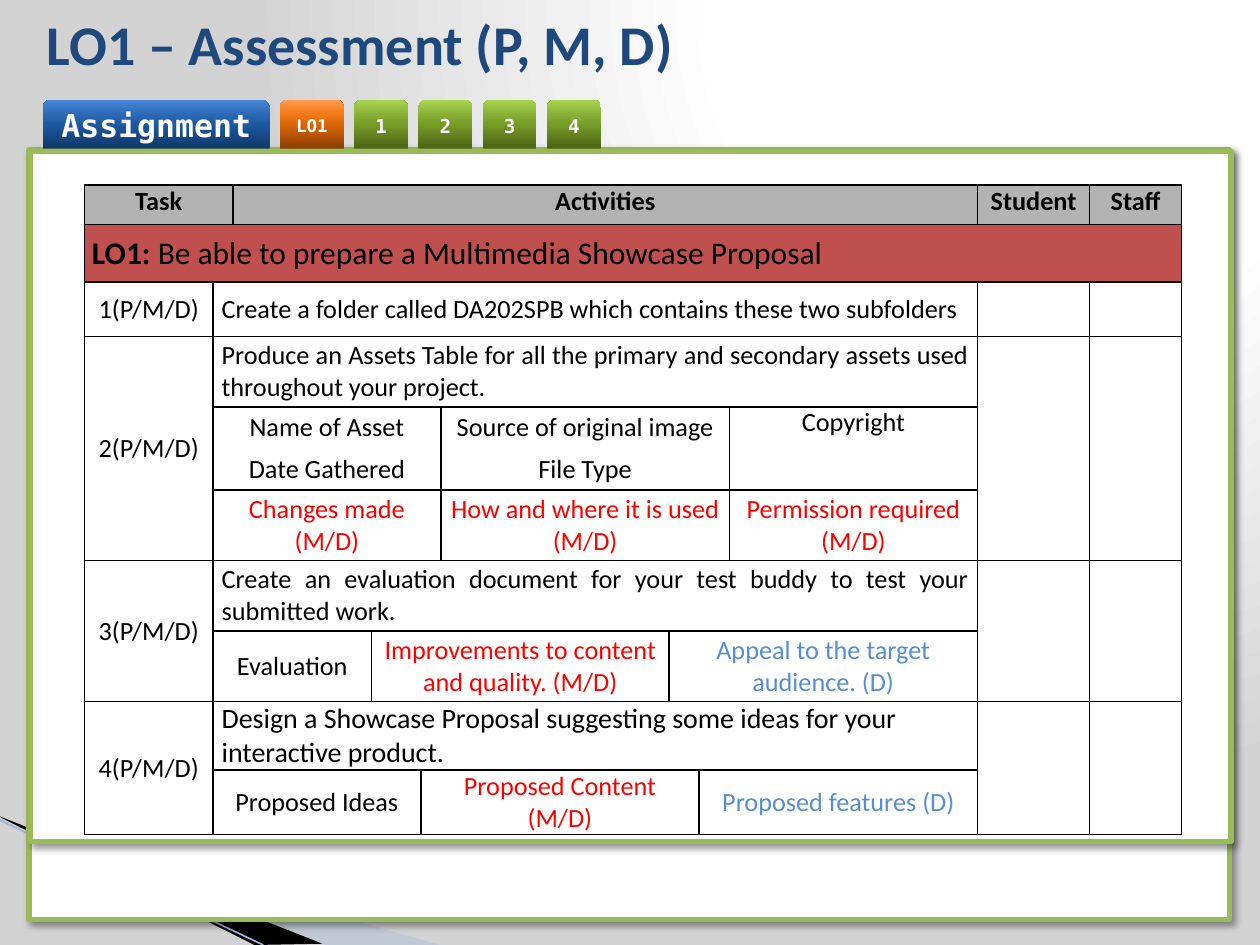
"""Build the LO1 assessment slide: tab strip, panels and a task table."""
from itertools import product
from pptx import Presentation
from pptx.dml.color import RGBColor
from pptx.enum.shapes import MSO_CONNECTOR, MSO_SHAPE
from pptx.enum.text import MSO_ANCHOR, PP_ALIGN
from pptx.oxml import parse_xml
from pptx.oxml.ns import nsdecls
from pptx.util import Inches, Pt

BLACK, WHITE = RGBColor(0, 0, 0), RGBColor(255, 255, 255)
NAVY, GREEN = RGBColor(0x1F, 0x49, 0x7D), RGBColor(0x9B, 0xBB, 0x59)
GREY, BRICK = RGBColor(0xB3, 0xB3, 0xB3), RGBColor(0xC0, 0x50, 0x4D)
RED, SKY = RGBColor(255, 0, 0), RGBColor(0x55, 0x8E, 0xD5)
HAZE, EDGE = RGBColor(0xA7, 0xB9, 0xDB), RGBColor(0x9E, 0xB3, 0xD6)
LEFT, CENTER, JUST = PP_ALIGN.LEFT, PP_ALIGN.CENTER, PP_ALIGN.JUSTIFY
NS = nsdecls("a")


def gradient(stops, direction):
    gs = "".join(f'<a:gs pos="{pos * 1000}"><a:srgbClr val="{c}"/></a:gs>' for pos, c in stops)
    return f'<a:gradFill {NS} rotWithShape="1"><a:gsLst>{gs}</a:gsLst>{direction}</a:gradFill>'


def write(p, text, size, color, bold=False, font="Calibri"):
    r = p.add_run()
    r.text = text
    r.font.name, r.font.size, r.font.bold = font, Pt(size), bold
    r.font.color.rgb = color


prs = Presentation()
prs.slide_width, prs.slide_height = Inches(10), Inches(7.5)
U = prs.slide_width // 100
s = prs.slides.add_slide(prs.slide_layouts[5])
radial = '<a:path path="circle"><a:fillToRect l="65000" b="98000"/></a:path>'
backdrop = gradient([(0, "FFFFFF"), (40, "FFFFFF"), (100, "D3D3D3")], radial)
s._element.cSld.insert(0, parse_xml(
    f'<p:bg {nsdecls("p")}><p:bgPr>{backdrop}<a:effectLst {NS}/></p:bgPr></p:bg>'))

title = s.shapes.title
title.left, title.top, title.width, title.height = int(2.7 * U), int(-1.3 * U), 90 * U, int(9.4 * U)
tf = title.text_frame
tf.vertical_anchor = MSO_ANCHOR.MIDDLE
tf.paragraphs[0].alignment = LEFT
write(tf.paragraphs[0], "LO1 – Assessment (P, M, D)", 32, NAVY, True)

for color, alpha, points in [
    (HAZE, 40, [(0, 650), (349, 750), (259, 750), (0, 649)]),
    (BLACK, 100, [(0, 648), (256, 749), (202, 750), (1, 649)]),
]:
    fb = s.shapes.build_freeform(*points[0], scale=U / 10)
    fb.add_line_segments(points[1:])
    sp = fb.convert_to_shape()
    sp.shadow.inherit = False
    sp.fill.solid()
    sp.fill.fore_color.rgb = color
    sp.line.fill.background()
    clr = sp._element.spPr.find(".//{*}solidFill/{*}srgbClr")
    clr.append(parse_xml(f'<a:alpha {NS} val="{alpha * 1000}"/>'))

line = s.shapes.add_connector(MSO_CONNECTOR.STRAIGHT, 0, int(65.1 * U), int(20.9 * U), 75 * U)
line.line.color.rgb, line.line.width = EDGE, Pt(0.95)
line._element.spPr.append(parse_xml(f"<a:effectLst {NS}/>"))

for x, y, height in [(2.3, 11.9, 61.1), (2.4, 12, 54.8)]:
    sp = s.shapes.add_shape(MSO_SHAPE.RECTANGLE, int(x * U), int(y * U), int(95.3 * U), int(height * U))
    sp.fill.solid()
    sp.fill.fore_color.rgb = WHITE
    sp.line.color.rgb, sp.line.width = GREEN, Pt(3)
    sp._element.spPr.append(parse_xml(
        f'<a:effectLst {NS}><a:outerShdw blurRad="{Pt(4)}" dist="{Pt(3)}" dir="2700000" algn="tl" '
        'rotWithShape="0"><a:srgbClr val="000000"><a:alpha val="40000"/></a:srgbClr>'
        '</a:outerShdw></a:effectLst>'))

BLUES = ["0F3766", "1D59A1", "2D6AB6", "4786DB"]
ORANGES = ["8B3F00", "DA6606", "F47917", "FF9C54"]
GREENS = ["4A6316", "769C27", "89B137", "A9D651"]
tabs = [("Assignment", 18, 18, BLUES), ("LO1", 5.1, 10, ORANGES)]
tabs += [(n, 4.3, 11, GREENS) for n in "1234"]
x = 3.4
for label, width, size, shades in tabs:
    sp = s.shapes.add_shape(MSO_SHAPE.ROUND_2_SAME_RECTANGLE, int(x * U), int(7.9 * U),
                            int(width * U), int(3.9 * U))
    sp.shadow.inherit = False
    sp.line.fill.background()
    fill = gradient(zip((0, 50, 70, 100), shades), '<a:lin ang="16200000" scaled="0"/>')
    sp._element.spPr.insert(2, parse_xml(fill))
    tf = sp.text_frame
    tf.vertical_anchor = MSO_ANCHOR.MIDDLE
    tf.paragraphs[0].alignment = CENTER
    write(tf.paragraphs[0], label, size, WHITE, True, "DejaVu Sans Mono")
    x += width + 0.8

cols = [10.2, 1.6, 11, 3.9, 1.6, 18.1, 2.4, 2.4, 19.7, 8.9, 7.3]
rows = [3.1, 4.6, 4.3, 5.6, 6.6, 5.6, 5.6, 5.6, 3.8, 5.1]
table = s.shapes.add_table(len(rows), len(cols), int(6.7 * U), int(14.7 * U),
                           int(sum(cols) * U), int(sum(rows) * U)).table
table.first_row = table.horz_banding = False
for col, width in zip(table.columns, cols):
    col.width = int(width * U)
for row, height in zip(table.rows, rows):
    row.height = int(height * U)

for i, j in product(range(len(rows)), range(len(cols))):
    cell = table.cell(i, j)
    cell.margin_left = cell.margin_right = int((0.7 if i > 1 else 0.6) * U)
    cell.margin_top = cell.margin_bottom = 0
    cell.vertical_anchor = MSO_ANCHOR.MIDDLE if i else MSO_ANCHOR.TOP
    cell.fill.solid()
    cell.fill.fore_color.rgb = {0: GREY, 1: BRICK}.get(i, WHITE)
    for k, side in enumerate("LRTB"):
        cell._tc.tcPr.insert(k, parse_xml(
            f'<a:ln{side} {NS} w="{Pt(1)}"><a:solidFill><a:srgbClr val="000000"/></a:solidFill></a:ln{side}>'))

for j, span, text in [(0, 2, "Task"), (2, 7, "Activities"), (9, 1, "Student"), (10, 1, "Staff")]:
    cell = table.cell(0, j)
    if span > 1:
        cell.merge(table.cell(0, j + span - 1))
    p = cell.text_frame.paragraphs[0]
    p.alignment = CENTER
    write(p, text, 15, BLACK, True)

table.cell(1, 0).merge(table.cell(1, len(cols) - 1))
p = table.cell(1, 0).text_frame.paragraphs[0]
write(p, "LO1: ", 18, BLACK, True)
write(p, "Be able to prepare a Multimedia Showcase Proposal", 18, BLACK)

entries = []
for number, (i, depth) in enumerate([(2, 1), (3, 3), (6, 2), (8, 2)], 1):
    entries.append((i, 0, 1, [f"{number}(P/M/D)"], BLACK, CENTER, 15, 0))
    if depth > 1:
        for j in (0, 9, 10):
            table.cell(i, j).merge(table.cell(i + depth - 1, j))
entries += [
    (2, 1, 8, ["Create a folder called DA202SPB which contains these two subfolders"], BLACK, JUST, 15, 0),
    (3, 1, 8, ["Produce an Assets Table for all the primary and secondary assets used "
               "throughout your project."], BLACK, JUST, 15, 0),
    (4, 1, 4, ["Name of Asset", "Date Gathered"], BLACK, CENTER, 15, 6),
    (4, 5, 3, ["Source of original image", "File Type"], BLACK, CENTER, 15, 6),
    (4, 8, 1, ["Copyright"], BLACK, CENTER, 15, 6),
    (5, 1, 4, ["Changes made (M/D)"], RED, CENTER, 15, 6),
    (5, 5, 3, ["How and where it is used (M/D)"], RED, CENTER, 15, 6),
    (5, 8, 1, ["Permission required (M/D)"], RED, CENTER, 15, 6),
    (6, 1, 8, ["Create an evaluation document for your test buddy to test your submitted work."],
     BLACK, JUST, 15, 0),
    (7, 1, 2, ["Evaluation"], BLACK, CENTER, 15, 0),
    (7, 3, 3, ["Improvements to content and quality. (M/D)"], RED, CENTER, 15, 0),
    (7, 6, 3, ["Appeal to the target audience. (D)"], SKY, CENTER, 15, 0),
    (8, 1, 8, ["Design a Showcase Proposal suggesting some ideas for your interactive product."],
     BLACK, LEFT, 16, 0),
    (9, 1, 3, ["Proposed Ideas"], BLACK, CENTER, 15, 0),
    (9, 4, 3, ["Proposed Content (M/D)"], RED, CENTER, 15, 0),
    (9, 7, 2, ["Proposed features (D)"], SKY, CENTER, 15, 0),
]
for i, j, span, texts, color, align, size, after in entries:
    cell = table.cell(i, j)
    if span > 1:
        cell.merge(table.cell(i, j + span - 1))
    tf = cell.text_frame
    for n, text in enumerate(texts):
        p = tf.add_paragraph() if n else tf.paragraphs[0]
        p.alignment, p.space_after = align, Pt(after)
        write(p, text, size, color)
    if (i, j) == (4, 8):
        cell.vertical_anchor = MSO_ANCHOR.TOP

prs.save("out.pptx")
